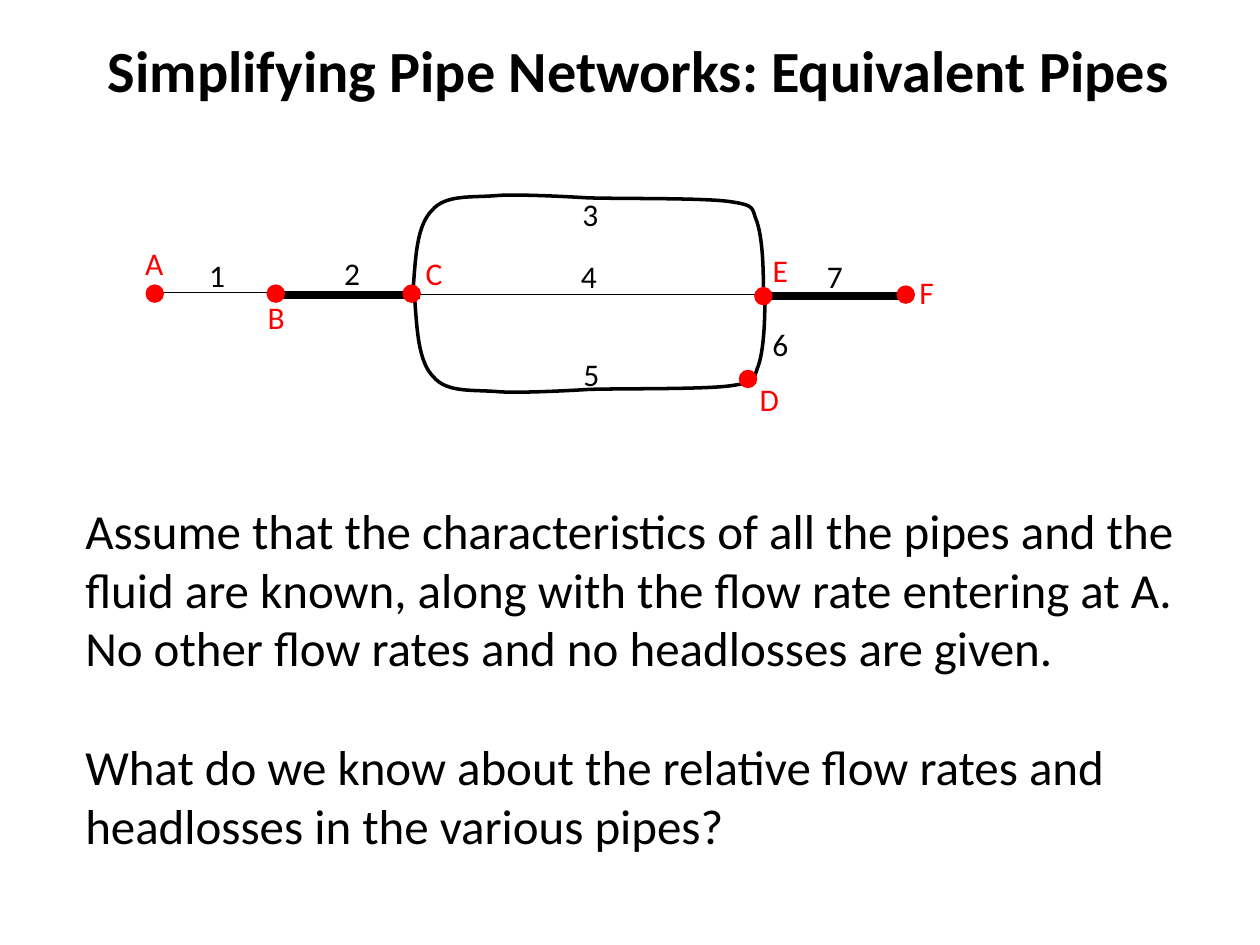
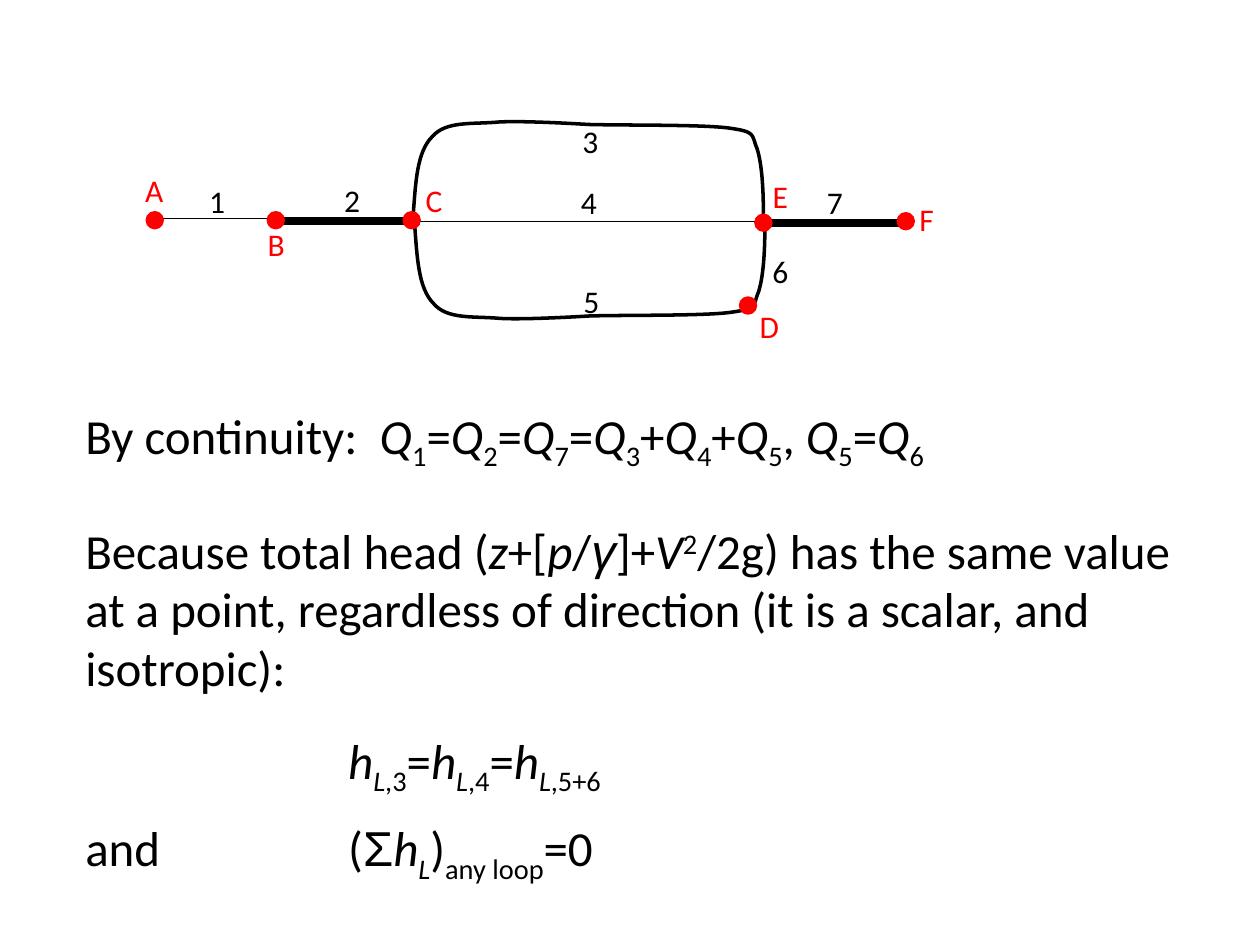
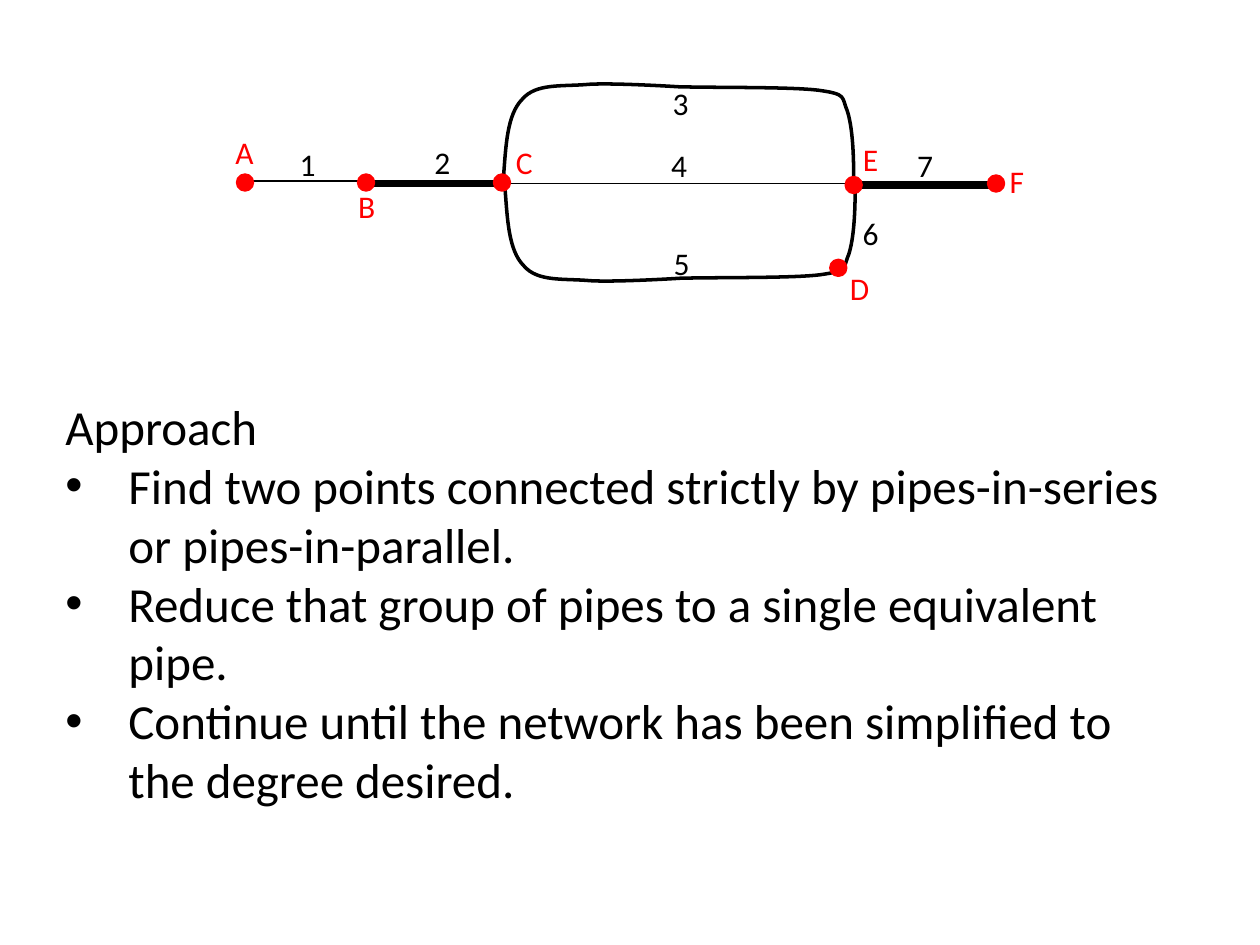
from dataclasses import dataclass

from lxml import etree
from pptx import Presentation
from pptx import util as u
from pptx.dml.color import RGBColor
from pptx.enum import shapes, text
from pptx.oxml.ns import qn


@dataclass(frozen=True)
class Theme:
    """Colours, fonts and sizes shared by the slides."""
    ink: RGBColor = RGBColor(0, 0, 0)
    node: RGBColor = RGBColor(255, 0, 0)
    font: str = "Calibri"
    symbol_font: str = "Arial"
    title: float = 33.3
    body: float = 28
    label: float = 18
    thin: float = 0.75
    outline: float = 2
    thick: float = 4.5
    node_size: float = 0.3
    label_width: float = 1.4
    label_height: float = 1.02


THEME = Theme()

STRAIGHT_PIPES = [
    (0.56, 3.3, 2.08, THEME.thin),
    (3.3, 6.05, 2.13, THEME.thick),
    (5.97, 12.83, 2.13, THEME.thin),
    (13.03, 15.8, 2.16, THEME.thick),
]
UPPER_BRANCH = [
    (5.92, 2.01),
    (5.97, 1.37), (5.99, 0.74), (6.3, 0.43),
    (6.58, 0.1), (7.11, 0.18), (7.65, 0.13),
    (8.18, 0.1), (9.45, 0.18), (9.45, 0.18),
    (10.21, 0.2), (11.71, 0.18), (12.27, 0.25),
    (12.85, 0.33), (12.73, 0.38), (12.85, 0.66),
    (12.95, 0.97), (12.98, 1.47), (12.98, 1.98),
]
LOWER_BRANCH = [(x + 0.03, 4.22 - y) for x, y in UPPER_BRANCH]
PIPE_LABELS = {
    "1": (1.27, 1.22), "2": (3.99, 1.19), "3": (8.79, 0), "4": (8.76, 1.24),
    "5": (8.81, 3.23), "6": (12.62, 2.62), "7": (13.72, 1.24),
}
NODE_LABELS = {
    "A": (0, 0.99), "B": (2.46, 2.08), "C": (5.64, 1.19),
    "D": (12.4, 3.73), "E": (12.62, 1.12), "F": (15.57, 1.57),
}
NODES = [(0.56, 1.96), (3, 1.96), (5.74, 1.96),
         (12.83, 2.01), (12.52, 3.68), (15.7, 1.98)]


def format_run(run, size, color=THEME.ink, bold=False, style=""):
    """Apply the theme font and an optional mathematical style."""
    run.font.name = THEME.symbol_font if "greek" in style else THEME.font
    run.font.size = u.Pt(size)
    run.font.color.rgb = color
    run.font.bold = bold
    run.font.italic = "italic" in style
    if "sub" in style:
        run.font._element.set("baseline", "-25000")
    if "sup" in style:
        run.font._element.set("baseline", "30000")


def add_text(parent, box, lines, size, color=THEME.ink, bold=False, centered=False):
    """Add wrapped text, one paragraph per line, and return the paragraphs."""
    frame = parent.add_textbox(*map(u.Cm, box)).text_frame
    frame.word_wrap = True
    frame.text = "\n".join(lines)
    for paragraph in frame.paragraphs:
        if centered:
            paragraph.alignment = text.PP_ALIGN.CENTER
        for run in paragraph.runs:
            format_run(run, size, color, bold)
    return frame.paragraphs


def add_formulas(slide, box, formulas):
    """Add paragraphs made of (words, style) pairs and return them."""
    paragraphs = add_text(slide.shapes, box, [""] * len(formulas), THEME.body)
    for paragraph, formula in zip(paragraphs, formulas):
        for words, style in formula:
            run = paragraph.add_run()
            run.text = words
            format_run(run, THEME.body, style=style)
    return paragraphs


def add_bullet(paragraph):
    """Give a paragraph a hanging bullet."""
    properties = paragraph._p.get_or_add_pPr()
    indent = u.Cm(1.27)
    properties.set("marL", str(indent))
    properties.set("indent", str(-indent))
    etree.SubElement(properties, qn("a:buFont"), typeface=THEME.symbol_font)
    etree.SubElement(properties, qn("a:buChar"), char="•")


def add_tab_stop(paragraph, position):
    """Set a left tab stop."""
    stops = etree.SubElement(paragraph._p.get_or_add_pPr(), qn("a:tabLst"))
    etree.SubElement(stops, qn("a:tab"), pos=str(u.Cm(position)), algn="l")


def add_straight_pipe(parent, start, end, width):
    """Draw a straight pipe between two points."""
    pipe = parent.add_connector(shapes.MSO_CONNECTOR.STRAIGHT,
                                *map(u.Cm, (*start, *end)))
    pipe.line.color.rgb = THEME.ink
    pipe.line.width = u.Pt(width)
    etree.SubElement(pipe._element.spPr, qn("a:effectLst"))


def add_curved_pipe(parent, points):
    """Draw a pipe through a start point and triples of Bezier points."""
    start, *controls = [(u.Cm(x), u.Cm(y)) for x, y in points]
    builder = parent.build_freeform(*start)
    builder.add_line_segments(controls, close=False)
    pipe = builder.convert_to_shape()
    outline = pipe._element.xpath(".//a:path")[0]
    segments = outline.findall(qn("a:lnTo"))
    for first in range(0, len(segments), 3):
        curve = etree.SubElement(outline, qn("a:cubicBezTo"))
        for segment in segments[first:first + 3]:
            curve.append(segment[0])
            outline.remove(segment)
    pipe.shadow.inherit = False
    pipe.fill.background()
    pipe.line.color.rgb = THEME.ink
    pipe.line.width = u.Pt(THEME.outline)


def add_node(parent, left, top):
    """Draw a junction dot."""
    node = parent.add_shape(shapes.MSO_SHAPE.OVAL, u.Cm(left), u.Cm(top),
                            u.Cm(THEME.node_size), u.Cm(THEME.node_size))
    node.shadow.inherit = False
    node.fill.solid()
    node.fill.fore_color.rgb = THEME.node
    node.line.color.rgb = THEME.node
    node.line.width = u.Pt(THEME.outline)


def add_network(slide, left, top):
    """Draw the pipe network as a group with its corner at left, top."""
    network = slide.shapes.add_group_shape().shapes
    for x1, x2, y, width in STRAIGHT_PIPES:
        add_straight_pipe(network, (left + x1, top + y), (left + x2, top + y), width)
    for branch in (UPPER_BRANCH, LOWER_BRANCH):
        add_curved_pipe(network, [(left + x, top + y) for x, y in branch])
    for labels, color in ((PIPE_LABELS, THEME.ink), (NODE_LABELS, THEME.node)):
        for label, (x, y) in labels.items():
            box = (left + x, top + y, THEME.label_width, THEME.label_height)
            add_text(network, box, [label], THEME.label, color, centered=True)
    for x, y in NODES:
        add_node(network, left + x, top + y)


def build_problem(slide):
    """Pose the question about the network."""
    add_network(slide, 2.41, 3.81)
    question = add_text(slide.shapes, (1.47, 9.96, 22.66, 7.44), [
        "Assume that the characteristics of all the pipes and the fluid are known, "
        "along with the flow rate entering at A. No other flow rates and no "
        "headlosses are given.",
        "What do we know about the relative flow rates and headlosses in the "
        "various pipes?",
    ], THEME.body)[1]
    question.space_before = u.Pt(34)
    add_text(slide.shapes, (1.45, 0.56, 22.86, 2.41),
             ["Simplifying Pipe Networks: Equivalent Pipes"],
             THEME.title, bold=True, centered=True)


def build_relations(slide):
    """State the flow and headloss relations."""
    add_network(slide, 2.41, 2.33)
    continuity = [("By continuity:  ", "")]
    for pipe, joint in zip("12734556", ("=", "=", "=", "+", "+", ", ", "=", "")):
        continuity += [("Q", "italic"), (pipe, "sub")]
        if joint:
            continuity.append((joint, ""))
    add_formulas(slide, (1.47, 8.05, 22.23, 1.45), [continuity])

    total_head = [
        ("Because total head (", ""), ("z", "italic"), ("+[", ""), ("p", "italic"),
        ("/", ""), ("γ", "greek italic"), ("]+", ""), ("V", "italic"), ("2", "sup"),
        ("/2g) has the same value at a point, regardless of direction "
         "(it is a scalar, and isotropic):", ""),
    ]
    headloss = [("h", "italic"), ("L", "italic sub")]
    parallel = [("\t", "")]
    for pipes, joint in ((",3", "="), (",4", "="), (",5+6", "")):
        parallel += headloss + [(pipes, "sub")]
        if joint:
            parallel.append((joint, ""))
    loop = [("and\t(", ""), ("Σ", "greek"), *headloss, (")", ""),
            ("any loop", "sub"), ("=0", "")]
    _, parallel_line, loop_line = add_formulas(
        slide, (1.47, 10.36, 23.06, 8.46), [total_head, parallel, loop])
    parallel_line.line_spacing = 1.5
    parallel_line.space_after = u.Pt(12)
    for line in (parallel_line, loop_line):
        add_tab_stop(line, 5.3)


def build_approach(slide):
    """List the steps of the simplification."""
    add_network(slide, 4.23, 1.57)
    _, *steps = add_text(slide.shapes, (1.07, 7.87, 23.06, 8.64), [
        "Approach",
        "Find two points connected strictly by pipes-in-series or pipes-in-parallel.",
        "Reduce that group of pipes to a single equivalent pipe.",
        "Continue until the network has been simplified to the degree desired.",
    ], THEME.body)
    for step in steps:
        add_bullet(step)


def main():
    """Build and save the presentation."""
    deck = Presentation()
    deck.slide_width, deck.slide_height = u.Cm(25.4), u.Cm(19.05)
    for build in (build_problem, build_relations, build_approach):
        build(deck.slides.add_slide(deck.slide_layouts[6]))
    deck.save("out.pptx")


if __name__ == "__main__":
    main()
